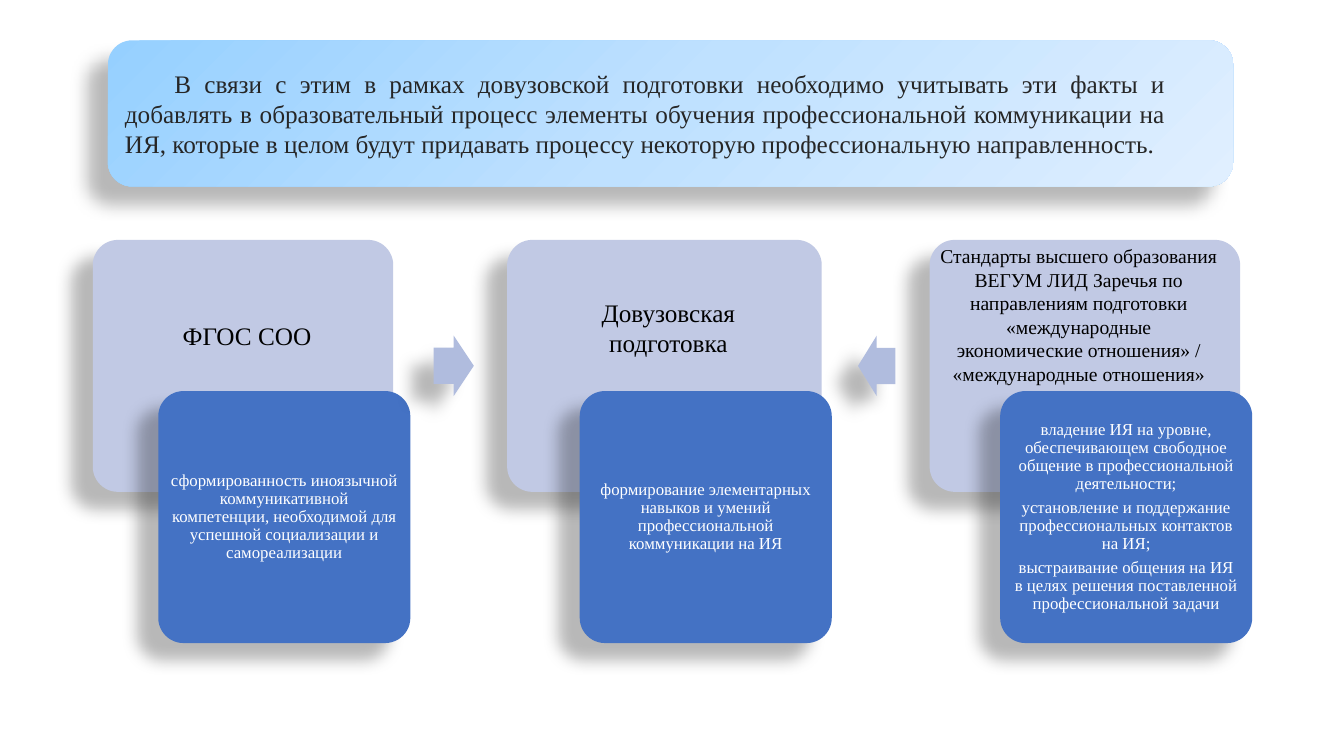
"""Builds a slide on pre-university training: a heading panel and three linked card pairs."""
from copy import deepcopy
from lxml import etree
from pptx import Presentation
from pptx.dml.color import RGBColor
from pptx.enum.shapes import MSO_SHAPE
from pptx.enum.text import MSO_ANCHOR, PP_ALIGN
from pptx.oxml.ns import qn
from pptx.util import Inches, Pt

ROUND, ARROW = MSO_SHAPE.ROUNDED_RECTANGLE, MSO_SHAPE.RIGHT_ARROW
MIDDLE = MSO_ANCHOR.MIDDLE
CENTER, JUSTIFY = PP_ALIGN.CENTER, PP_ALIGN.JUSTIFY
FONT = "Times New Roman"
COLORS = {
    "back": "C1C9E4", "card": "4472C4", "arrow": "B0BCDE", "shade": "000000",
    "head": "262626", "label": "000000", "body": "FFFFFF",
    "start": "96D0FF", "mid": "BFE1FF", "end": "E0EFFF",
}

deck = Presentation()
deck.slide_width, deck.slide_height = Inches(13.33), Inches(7.5)
slide = deck.slides.add_slide(deck.slide_layouts[6])


def add_form(kind, box, color):
    """Add a filled shape with a soft shadow to its lower left."""
    form = slide.shapes.add_shape(kind, *[Inches(v) for v in box])
    form.fill.solid()
    form.fill.fore_color.rgb = RGBColor.from_string(COLORS[color])
    form.line.fill.background()
    form.shadow.inherit = False
    effects = form._element.spPr.find(qn("a:effectLst"))
    shadow = etree.SubElement(effects, qn("a:outerShdw"), blurRad=str(Pt(11.8)),
                              dist=str(Pt(19.7)), dir=str(141 * 60000),
                              algn="tr", rotWithShape="0")
    shade = etree.SubElement(shadow, qn("a:srgbClr"), val=COLORS["shade"])
    etree.SubElement(shade, qn("a:alpha"), val="28000")
    return form


def set_text(form, text, size, color, align):
    """Fill a shape with text and format every paragraph alike."""
    frame = form.text_frame
    frame.text = text
    for para in frame.paragraphs:
        para.alignment = align
        for run in para.runs:
            run.font.name, run.font.size = FONT, Pt(size)
            run.font.color.rgb = RGBColor.from_string(COLORS[color])
    return frame


head = add_form(ROUND, (1.07, 0.4, 11.16, 1.45), "start")
head.fill.gradient()
head.fill.gradient_angle = 315
stops = head._element.spPr.find(".//" + qn("a:gsLst"))
stops.insert(1, deepcopy(stops[0]))
for stop, (place, color) in zip(head.fill.gradient_stops,
                                [(0, "start"), (0.5, "mid"), (1, "end")]):
    stop.position = place
    stop.color.rgb = RGBColor.from_string(COLORS[color])

frame = set_text(
    head,
    "В связи с этим в рамках довузовской подготовки необходимо учитывать эти факты и "
    "добавлять в образовательный процесс элементы обучения профессиональной коммуникации "
    "на ИЯ, которые в целом будут придавать процессу некоторую профессиональную "
    "направленность.",
    18, "head", JUSTIFY)
frame.word_wrap = True
frame.vertical_anchor = MIDDLE
frame.margin_right = Inches(0.6)
frame.paragraphs[0]._p.get_or_add_pPr().set("indent", str(Inches(0.49)))

pairs = [
    (0.92, 2.98, 1.57,
     "сформированность иноязычной коммуникативной компетенции, необходимой для "
     "успешной социализации и самореализации"),
    (5.03, 3.12, 5.75,
     "формирование элементарных навыков и умений профессиональной коммуникации на ИЯ"),
    (9.22, 3.08, 9.92,
     "владение ИЯ на уровне, обеспечивающем свободное общение в профессиональной "
     "деятельности;\n"
     "установление и поддержание профессиональных контактов на ИЯ;\n"
     "выстраивание общения на ИЯ в целях решения поставленной профессиональной задачи"),
]
for left, width, inner, text in pairs:
    back = add_form(ROUND, (left, 2.38, width, 2.5), "back")
    card = add_form(ROUND, (inner, 3.88, 2.5, 2.5), "card")
    back.adjustments[0] = card.adjustments[0] = 0.1
    frame = set_text(card, text, 12, "body", CENTER)
    frame.word_wrap = True
    frame.vertical_anchor = MIDDLE
    frame.margin_left = frame.margin_right = Inches(0.05)
    frame.margin_top = frame.margin_bottom = Inches(0.05)
    for para in frame.paragraphs:
        para.line_spacing = 0.9
        para.space_after = Pt(4.2)

for left, width, turn in [(4.3, 0.4, 0), (8.51, 0.37, 180)]:
    arrow = add_form(ARROW, (left, 3.33, width, 0.6), "arrow")
    arrow.adjustments[0], arrow.adjustments[1] = 0.6, 0.5
    arrow.rotation = turn

labels = [
    ((1.7, 3.13, 1.5, 0.4), 18, "ФГОС СОО"),
    ((5.73, 2.9, 1.8, 0.71), 18, "Довузовская\nподготовка"),
    ((9.2, 2.37, 3, 1.51), 14,
     "Стандарты высшего образования\nВЕГУМ ЛИД Заречья по\nнаправлениям подготовки\n"
     "«международные\nэкономические отношения» /\n«международные отношения»"),
]
for box, size, text in labels:
    label = slide.shapes.add_textbox(*[Inches(v) for v in box])
    set_text(label, text, size, "label", CENTER).word_wrap = False

deck.save("out.pptx")
